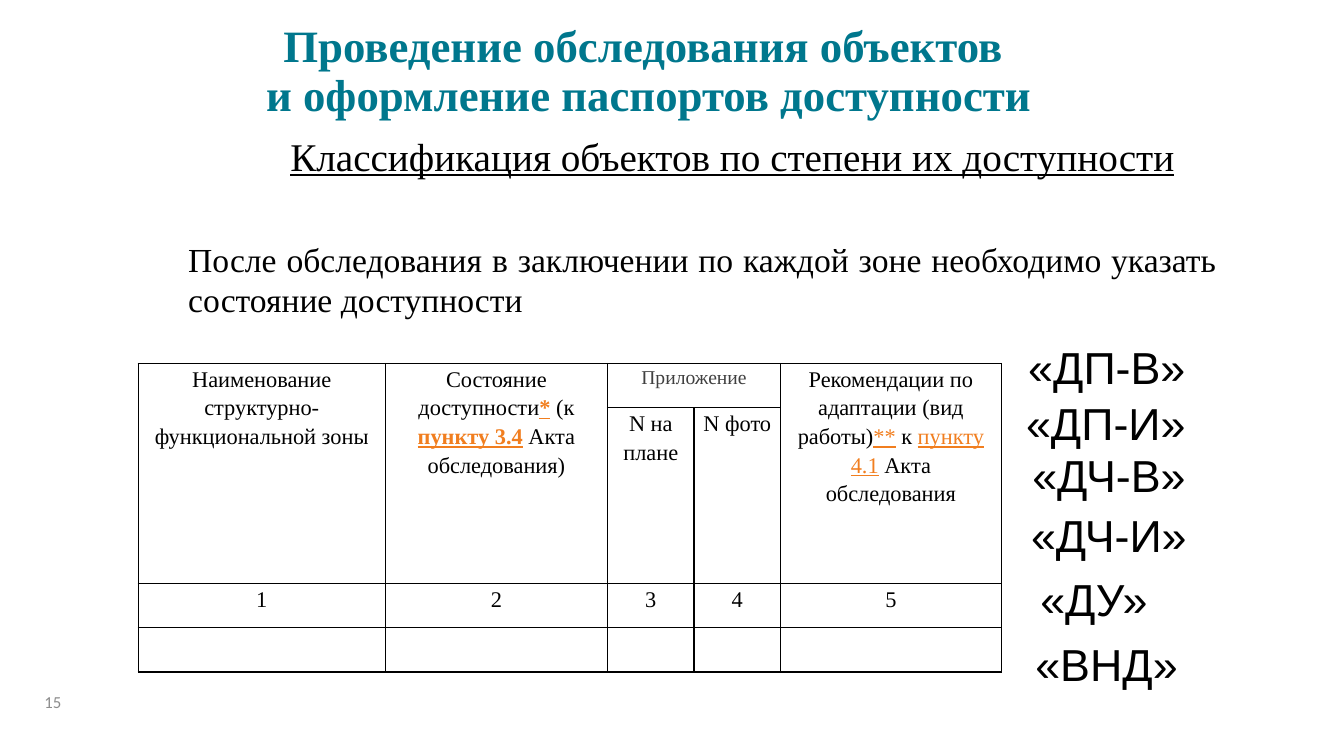
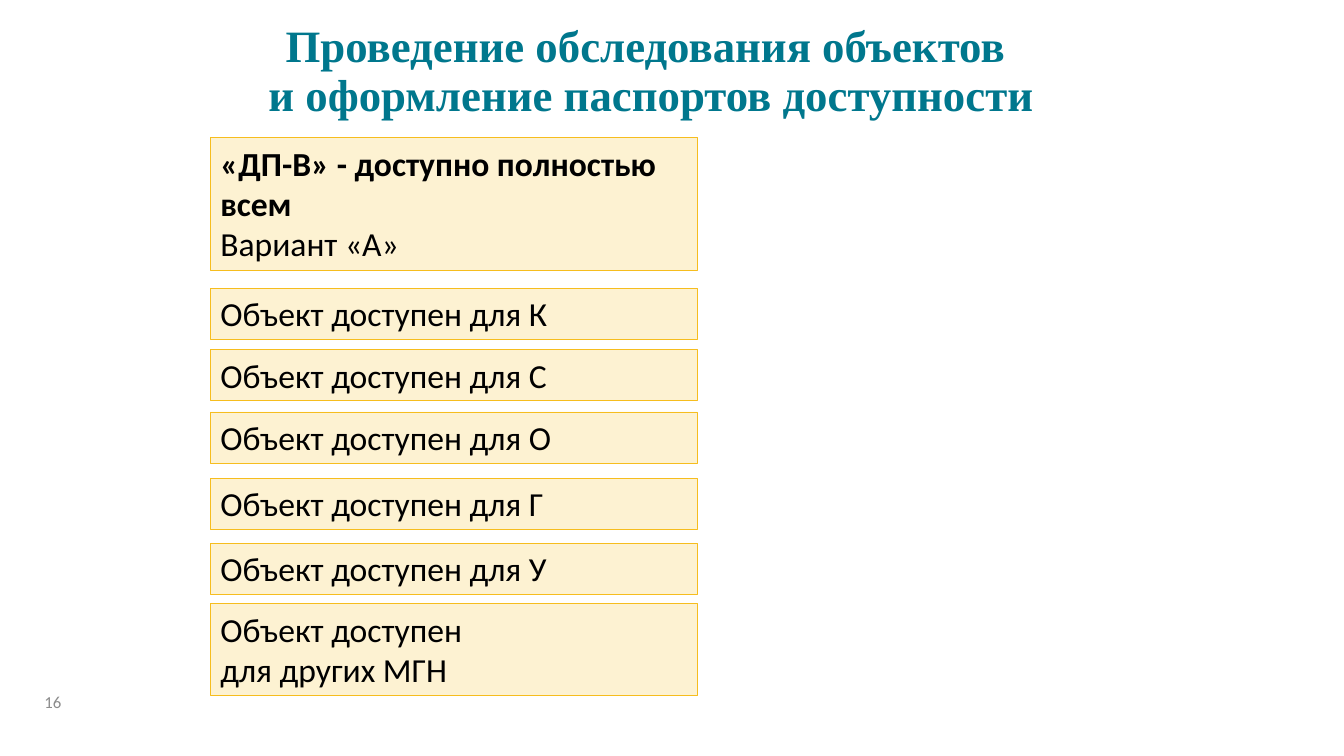
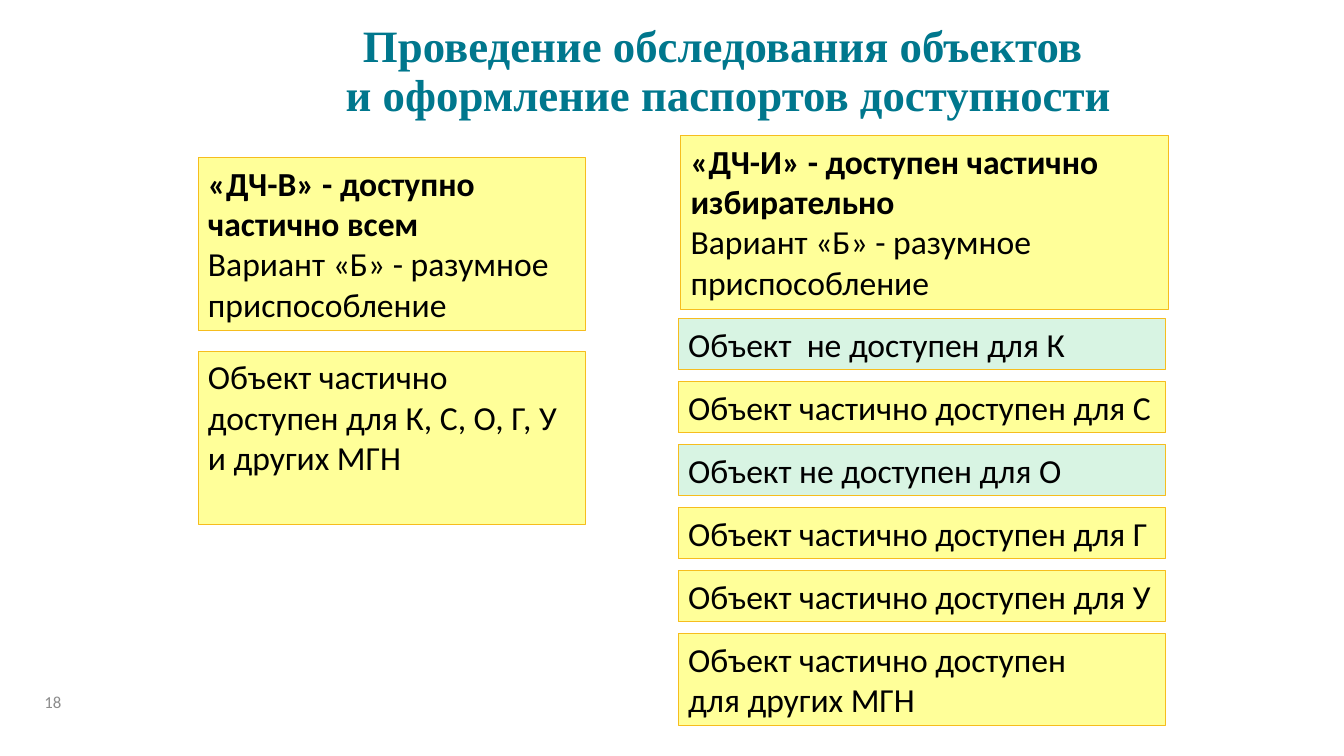
from dataclasses import dataclass

from lxml import etree
from pptx import Presentation
from pptx.dml.color import RGBColor
from pptx.enum import shapes, text
from pptx.oxml import ns
from pptx.util import Pt


@dataclass(frozen=True)
class Theme:
    serif: str = "Times New Roman"
    sans: str = "Calibri"
    code_face: str = "Arial"
    heading: str = "00778D"
    band: str = "FFFFFF"
    ink: str = "000000"
    muted: str = "404040"
    number: str = "8C8C8C"
    link: str = "F17E1F"
    card_line: str = "F6BD1E"
    cream: str = "FDF2D2"
    yellow: str = "FFFF99"
    mint: str = "D8F4E3"
    large: int = 32
    subtitle: int = 28
    body: int = 24
    cell: int = 16
    cell_small: int = 14
    footer: int = 12


THEME = Theme()
TITLE_LINES = ("Проведение обследования объектов ", "и оформление паспортов доступности")
ALIGN = text.PP_ALIGN
CARD_HEIGHT = 36.5
DOUBLE_CARD_HEIGHT = 65.5


def style(font, face, size, color, bold=False, underline=False):
    font.name = face
    font.size = Pt(size)
    font.color.rgb = RGBColor.from_string(color)
    font.bold = bold
    font.underline = underline


def paint(shape, fill, line, line_width):
    shape.fill.solid()
    shape.fill.fore_color.rgb = RGBColor.from_string(fill)
    shape.line.color.rgb = RGBColor.from_string(line)
    shape.line.width = Pt(line_width)


def write_lines(frame, lines, face, size, color, align=ALIGN.LEFT, bold_lines=0, underline=False):
    frame.word_wrap = True
    frame.auto_size = text.MSO_AUTO_SIZE.NONE
    for index, line in enumerate(lines):
        paragraph = frame.paragraphs[0] if index == 0 else frame.add_paragraph()
        paragraph.add_run().text = line
        paragraph.alignment = align
        style(paragraph.font, face, size, color, index < bold_lines, underline)


def add_label(slide, box, line, face, size, color, anchor=text.MSO_ANCHOR.TOP, **options):
    label = slide.shapes.add_textbox(*map(Pt, box))
    label.text_frame.vertical_anchor = anchor
    write_lines(label.text_frame, [line], face, size, color, **options)


def add_page(prs, number, title_left, title_width):
    slide = prs.slides.add_slide(prs.slide_layouts[5])
    title = slide.shapes.title
    title.left, title.top, title.width, title.height = map(Pt, (title_left, 15, title_width, 73.5))
    paint(title, THEME.band, THEME.band, 1)
    frame = title.text_frame
    frame.margin_left = frame.margin_right = Pt(5)
    frame.margin_top = frame.margin_bottom = Pt(3.6)
    frame.vertical_anchor = text.MSO_ANCHOR.MIDDLE
    write_lines(frame, TITLE_LINES, THEME.serif, THEME.large, THEME.heading,
                ALIGN.CENTER, bold_lines=len(TITLE_LINES))
    for paragraph in frame.paragraphs:
        paragraph.line_spacing = 0.9
    add_label(slide, (24.7, 493.6, 57, 16), str(number), THEME.sans, THEME.footer,
              THEME.number, text.MSO_ANCHOR.MIDDLE)
    return slide


def add_card(slide, box, lines, fill, bold_lines=0):
    card = slide.shapes.add_shape(shapes.MSO_SHAPE.RECTANGLE, *map(Pt, box))
    card.shadow.inherit = False
    paint(card, fill, THEME.card_line, 0.5)
    card.text_frame.vertical_anchor = text.MSO_ANCHOR.TOP
    write_lines(card.text_frame, lines, THEME.sans, THEME.body, THEME.ink, bold_lines=bold_lines)


def add_card_column(slide, left, width, tops, cards):
    for top, (lines, fill) in zip(tops, cards):
        height = CARD_HEIGHT if len(lines) == 1 else DOUBLE_CARD_HEIGHT
        add_card(slide, (left, top, width, height), lines, fill)


def border_cell(cell):
    properties = cell._tc.get_or_add_tcPr()
    for side in ("a:lnL", "a:lnR", "a:lnT", "a:lnB"):
        edge = etree.SubElement(properties, ns.qn(side), w=str(Pt(1)))
        edge_fill = etree.SubElement(edge, ns.qn("a:solidFill"))
        etree.SubElement(edge_fill, ns.qn("a:srgbClr"), val=THEME.ink)


def fill_cell(cell, runs, size, color):
    paragraph = cell.text_frame.paragraphs[0]
    paragraph.alignment = ALIGN.CENTER
    paragraph.line_spacing = 1.15
    style(paragraph.font, THEME.serif, size, color)
    for words, role in runs:
        run = paragraph.add_run()
        run.text = words
        if role != "plain":
            style(run.font, THEME.serif, size, THEME.link, role == "bold link", True)


def add_zone_table(slide):
    columns = (176.4, 158.8, 61.8, 61.8, 157.6)
    rows = (31.5, 125.8, 31.5, 31.5)
    table = slide.shapes.add_table(len(rows), len(columns), Pt(98.8), Pt(259.7),
                                   Pt(sum(columns)), Pt(sum(rows))).table
    table.first_row = table.horz_banding = False
    for column, width in zip(table.columns, columns):
        column.width = Pt(width)
    for row, height in zip(table.rows, rows):
        row.height = Pt(height)
    for cell in table.iter_cells():
        cell.margin_left = cell.margin_right = Pt(5)
        cell.margin_top = cell.margin_bottom = Pt(0)
        border_cell(cell)
        cell.fill.background()
    for column in (0, 1, 4):
        table.cell(0, column).merge(table.cell(1, column))
    table.cell(0, 2).merge(table.cell(0, 3))

    headings = {
        (0, 0): [("Наименование структурно-функциональной зоны", "plain")],
        (0, 1): [("Состояние доступности", "plain"), ("*", "bold link"), (" (к ", "plain"),
                 ("пункту 3.4", "bold link"), (" Акта обследования)", "plain")],
        (0, 4): [("Рекомендации по адаптации (вид работы)", "plain"), ("**", "link"),
                 (" к ", "plain"), ("пункту 4.1", "link"), (" Акта обследования", "plain")],
        (1, 2): [("N на плане", "plain")],
        (1, 3): [("N фото", "plain")],
    }
    numbering = {(2, column): [(str(column + 1), "plain")] for column in range(len(columns))}
    for (row, column), runs in (headings | numbering).items():
        fill_cell(table.cell(row, column), runs, THEME.cell, THEME.ink)
    fill_cell(table.cell(0, 2), [("Приложение", "plain")], THEME.cell_small, THEME.muted)


def build_classification(prs):
    slide = add_page(prs, 15, 127.2, 672.5)
    add_label(slide, (127.4, 90.7, 791.3, 41), "Классификация объектов по степени их доступности",
              THEME.serif, THEME.subtitle, THEME.ink, align=ALIGN.CENTER, underline=True)
    add_label(slide, (127.4, 167.2, 748.8, 65.5),
              "После обследования в заключении по каждой зоне необходимо указать состояние доступности",
              THEME.serif, THEME.body, THEME.ink, align=ALIGN.JUSTIFY)
    add_zone_table(slide)
    codes = (("«ДП-В»", 727.4, 239, 203.8), ("«ДП-И»", 725.8, 278.9, 251.3),
             ("«ДЧ-В»", 730.3, 316, 172), ("«ДЧ-И»", 729.4, 359.3, 172),
             ("«ДУ»", 736, 404.6, 131.8), ("«ВНД»", 732.4, 451.4, 166.3))
    for code, left, top, width in codes:
        add_label(slide, (left, top, width, 46), code, THEME.code_face, THEME.large, THEME.ink)


def build_full_access(prs):
    slide = add_page(prs, 16, 131, 668.2)
    left, width = 150.3, 347.8
    add_card(slide, (left, 98.3, width, 94.5),
             ["«ДП-В» - доступно полностью всем", "Вариант «А»"], THEME.cream, bold_lines=1)
    groups = [[f"Объект доступен для {group}"] for group in "КСОГУ"]
    groups.append(["Объект доступен", "для других МГН"])
    tops = (206, 249.8, 294.3, 341.6, 388, 431.3)
    add_card_column(slide, left, width, tops, [(lines, THEME.cream) for lines in groups])


def build_partial_access(prs):
    slide = add_page(prs, 18, 122.2, 796.3)
    variant = "Вариант «Б» - разумное приспособление"
    all_left, all_width, tall = 141.5, 276.5, 123.8
    add_card(slide, (all_left, 112.5, all_width, tall),
             ["«ДЧ-В» - доступно частично всем", variant], THEME.yellow, bold_lines=1)
    add_card(slide, (all_left, 250.8, all_width, tall),
             ["Объект частично доступен для К, С, О, Г, У и других МГН"], THEME.yellow)

    some_left, some_width = 484.5, 348.2
    add_card(slide, (486.2, 96.9, some_width, tall),
             ["«ДЧ-И» - доступен частично избирательно", variant], THEME.yellow, bold_lines=1)
    groups = [
        (["Объект  не доступен для К"], THEME.mint),
        (["Объект частично доступен для С"], THEME.yellow),
        (["Объект не доступен для О"], THEME.mint),
        (["Объект частично доступен для Г"], THEME.yellow),
        (["Объект частично доступен для У"], THEME.yellow),
        (["Объект частично доступен", "для других МГН"], THEME.yellow),
    ]
    tops = [227.5 + 45 * index for index in range(len(groups))]
    add_card_column(slide, some_left, some_width, tops, groups)


def main():
    prs = Presentation()
    prs.slide_width, prs.slide_height = Pt(960), Pt(540)
    build_classification(prs)
    build_full_access(prs)
    build_partial_access(prs)
    prs.save("out.pptx")


if __name__ == "__main__":
    main()
